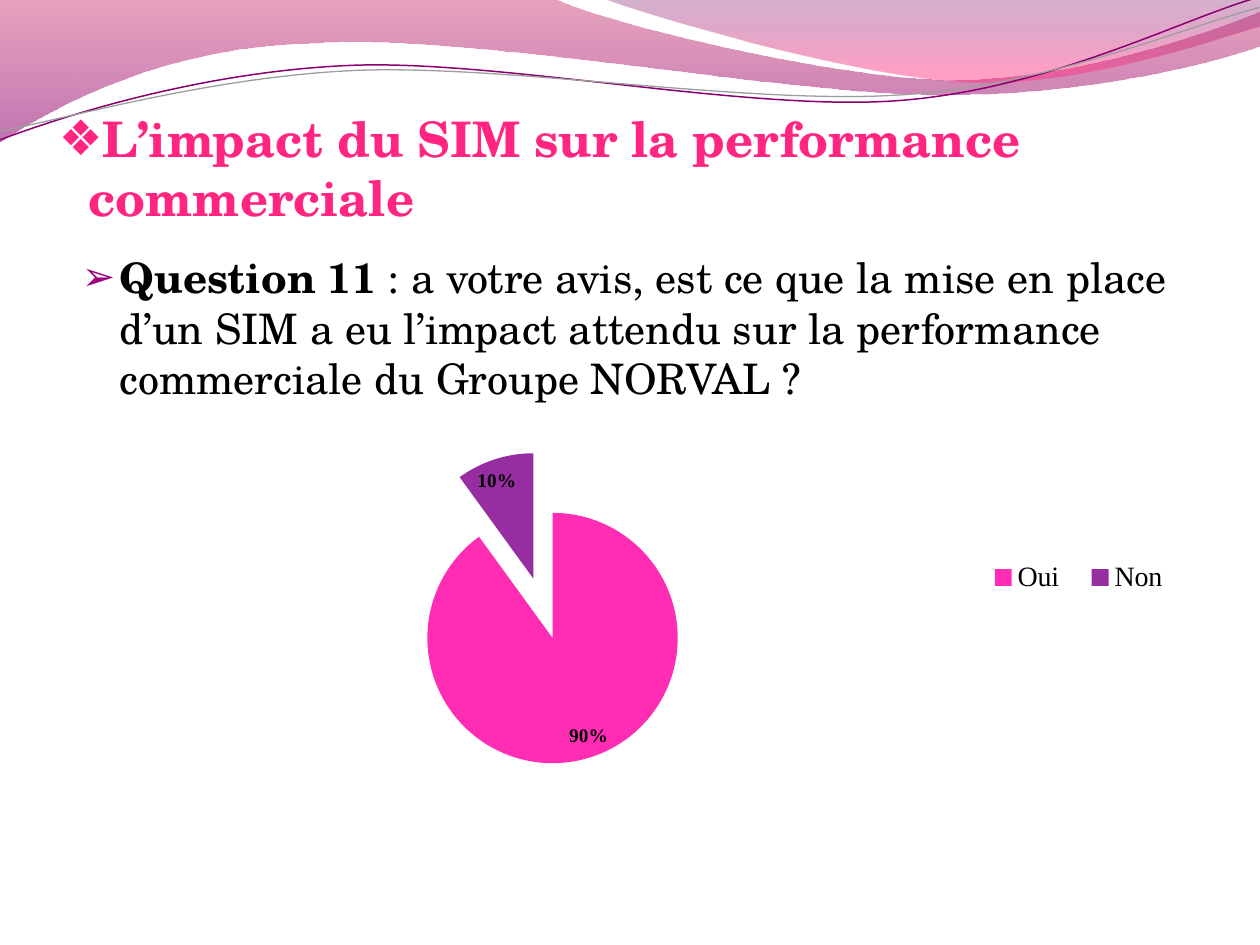
from dataclasses import dataclass
from typing import Optional

from lxml import etree
from pptx import Presentation
from pptx import util as u
from pptx.chart.data import CategoryChartData
from pptx.dml.color import RGBColor
from pptx.enum import chart as ch, text
from pptx.oxml import parse_xml
from pptx.oxml.ns import nsdecls, qn

COLORS = {
    "rose": "C9326D", "plum": "8E0073", "violet": "73005E", "pink": "FF2D7F",
    "wave": "8A0070", "grey": "9D9D9D", "title": "FF2581", "black": "000000",
    "arrow": "9C007F", "oui": "FF2DB4", "non": "962DA0",
}
SERIF, CHART_SERIF, BULLET_FONT = "TeX Gyre Schola", "Times New Roman", "DejaVu Sans"


@dataclass
class Ribbon:
    """Outline in cm: one point per straight segment, three per Bezier curve."""
    start: tuple
    segments: list
    stops: tuple = ()  # (position %, colour, opacity %)
    line: Optional[tuple] = None  # (colour, points)


@dataclass
class TextBlock:
    box: tuple  # left, top, width, height in cm
    insets: tuple
    runs: list  # (text, bold)
    size: float
    color: str
    bullet: str
    hanging: float
    anchor: text.MSO_ANCHOR
    space_before: float = 0
    bullet_color: Optional[str] = None
    bullet_percent: int = 100


RIBBONS = [
    Ribbon((0, 0), [
        [(11.18, -0.03)],
        [(12.09, 0.43), (16.87, 1.6), (19.25, 1.6)],
        [(21.67, 1.6), (24.33, 0.66), (25.4, 0.23)],
        [(25.43, 0.91)],
        [(24.97, 1.12), (22.1, 1.93), (18.95, 1.91)],
        [(15.8, 1.91), (9.7, 0.71), (6.53, 0.86)],
        [(3.28, 0.91), (1.17, 2.11), (-0.03, 2.87)],
    ], stops=((0, "rose", 45), (100, "plum", 55))),
    Ribbon((12.17, -0.03), [
        [(12.93, 0.28), (17.32, 1.57), (19.53, 1.65)],
        [(21.74, 1.75), (24.41, 0.81), (25.4, 0.53)],
        [(25.4, 0)],
    ], stops=((0, "violet", 30), (80, "pink", 45))),
    Ribbon((0, 2.82), [
        [(1.22, 2.36), (4.01, 1.45), (7.04, 1.32)],
        [(10.03, 1.19), (15.06, 2.26), (18.11, 2.03)],
        [(21.16, 1.8), (23.83, 0.38), (25.35, -0.05)],
    ], line=("wave", 0.85)),
    Ribbon((0, 2.64), [
        [(1.19, 2.44), (4.17, 1.55), (7.19, 1.42)],
        [(10.24, 1.3), (15.16, 2.13), (18.21, 1.91)],
        [(21.26, 1.7), (23.9, 0.53), (25.4, 0.15)],
    ], line=("grey", 0.75)),
]

TEXTS = [
    TextBlock((1.19, 1.98, 22.86, 2.59), (0, 0.13, 0, 0),
              [("L’impact du SIM sur la performance commerciale", True)],
              28, "title", "❖", 0.6, text.MSO_ANCHOR.BOTTOM),
    TextBlock((1.4, 4.95, 22.94, 3.18), (0.25, 0.13, 0.25, 0.13),
              [("Question 11", True),
               (" : a votre avis, est ce que la mise en place d’un SIM a eu l’impact "
                "attendu sur la performance commerciale du Groupe NORVAL ?", False)],
              24, "black", "➢", 0.76, text.MSO_ANCHOR.TOP, 5.6, "arrow", 95),
]


def rgb(name: str) -> RGBColor:
    return RGBColor.from_string(COLORS[name])


def bend(shape, segments: list) -> None:
    """Turn each run of three line points into one cubic curve."""
    outline = shape._element.find(".//" + qn("a:path"))
    steps = iter(outline.findall(qn("a:lnTo")))
    for segment in segments:
        group = [next(steps) for _ in segment]
        if len(group) == 1:
            continue
        curve = etree.Element(qn("a:cubicBezTo"))
        group[0].addprevious(curve)
        for step in group:
            curve.append(step[0])
            outline.remove(step)


def draw_ribbon(slide, ribbon: Ribbon) -> None:
    points = [(u.Cm(x), u.Cm(y)) for segment in ribbon.segments for x, y in segment]
    builder = slide.shapes.build_freeform(*map(u.Cm, ribbon.start))
    builder.add_line_segments(points, close=bool(ribbon.stops))
    shape = builder.convert_to_shape()
    bend(shape, ribbon.segments)
    shape.shadow.inherit = False
    shape.fill.background()
    if ribbon.line:
        color, width = ribbon.line
        shape.line.color.rgb = rgb(color)
        shape.line.width = u.Pt(width)
        return
    shape.line.fill.background()
    stops = "".join(
        f'<a:gs pos="{pos * 1000}"><a:srgbClr val="{COLORS[color]}">'
        f'<a:alpha val="{alpha * 1000}"/></a:srgbClr></a:gs>'
        for pos, color, alpha in ribbon.stops)
    gradient = parse_xml(f'<a:gradFill {nsdecls("a")}><a:gsLst>{stops}</a:gsLst>'
                         '<a:lin ang="5400000" scaled="0"/></a:gradFill>')
    properties = shape._element.spPr
    properties.replace(properties.find(qn("a:noFill")), gradient)


def add_bullet(paragraph, block: TextBlock) -> None:
    props = paragraph._p.get_or_add_pPr()
    props.set("marL", str(u.Cm(block.hanging)))
    props.set("indent", str(-u.Cm(block.hanging)))
    color = etree.SubElement(props, qn("a:buClr"))
    etree.SubElement(color, qn("a:srgbClr"), val=COLORS[block.bullet_color or block.color])
    etree.SubElement(props, qn("a:buSzPct"), val=str(block.bullet_percent * 1000))
    etree.SubElement(props, qn("a:buFont"), typeface=BULLET_FONT)
    etree.SubElement(props, qn("a:buChar"), char=block.bullet)


def draw_text(slide, block: TextBlock) -> None:
    frame = slide.shapes.add_textbox(*map(u.Cm, block.box)).text_frame
    frame.word_wrap = True
    frame.vertical_anchor = block.anchor
    (frame.margin_left, frame.margin_top,
     frame.margin_right, frame.margin_bottom) = map(u.Cm, block.insets)
    paragraph = frame.paragraphs[0]
    add_bullet(paragraph, block)
    paragraph.space_before = u.Pt(block.space_before)
    paragraph.font.name, paragraph.font.size = SERIF, u.Pt(block.size)
    paragraph.font.color.rgb = rgb(block.color)
    for words, bold in block.runs:
        run = paragraph.add_run()
        run.text, run.font.bold = words, bold


def manual_layout(x: float, y: float, w: float, h: float, inner: bool = False):
    target = '<c:layoutTarget val="inner"/>' if inner else ""
    sizes = "".join(f'<c:{k} val="{v}"/>' for k, v in zip("xywh", (x, y, w, h)))
    return parse_xml(f'<c:layout {nsdecls("c")}><c:manualLayout>{target}<c:xMode val="edge"/>'
                     f'<c:yMode val="edge"/>{sizes}</c:manualLayout></c:layout>')


def draw_answers(slide) -> None:
    data = CategoryChartData()
    data.categories = ["Oui", "Non"]
    data.add_series("Series 1", (90, 10))
    box = map(u.Cm, (1.4, 8.13, 22.73, 8.89))
    pie = slide.shapes.add_chart(ch.XL_CHART_TYPE.PIE, *box, data).chart
    pie.has_title = False
    pie.font.name, pie.font.size = "TeX Gyre Pagella", u.Pt(10)
    pie.font.color.rgb = rgb("black")

    # Legend in one row, right of the pie
    pie.has_legend = True
    legend = pie.legend
    legend.position = ch.XL_LEGEND_POSITION.RIGHT
    legend.include_in_layout = False
    legend.font.name, legend.font.size = CHART_SERIF, u.Pt(16)
    for old in legend._element.findall(qn("c:layout")):
        legend._element.remove(old)
    legend._element.find(qn("c:legendPos")).addnext(manual_layout(0.8, 0.34, 0.19, 0.11))

    # Plot area, slices pulled apart
    area = pie._chartSpace.chart.plotArea
    for old in area.findall(qn("c:layout")):
        area.remove(old)
    area.insert(0, manual_layout(0.08, 0.11, 0.68, 0.71, inner=True))
    plot = pie.plots[0]
    plot.vary_by_categories = True
    answers = plot.series[0]
    for index, color in enumerate(("oui", "non")):
        fill = answers.points[index].format.fill
        fill.solid()
        fill.fore_color.rgb = rgb(color)
    explosion = parse_xml(f'<c:explosion {nsdecls("c")} val="25"/>')
    answers._element.find(qn("c:dPt")).addprevious(explosion)

    # Percentages
    labels = answers.data_labels
    labels.show_percentage, labels.show_value = True, False
    labels.number_format, labels.number_format_is_linked = "0%", False
    labels.position = ch.XL_LABEL_POSITION.BEST_FIT
    labels.font.name, labels.font.size, labels.font.bold = CHART_SERIF, u.Pt(11), True


def main() -> None:
    deck = Presentation()
    deck.slide_width, deck.slide_height = u.Cm(25.4), u.Cm(19.05)
    slide = deck.slides.add_slide(deck.slide_layouts[6])
    for ribbon in RIBBONS:
        draw_ribbon(slide, ribbon)
    for block in TEXTS:
        draw_text(slide, block)
    draw_answers(slide)
    deck.save("out.pptx")


if __name__ == "__main__":
    main()
